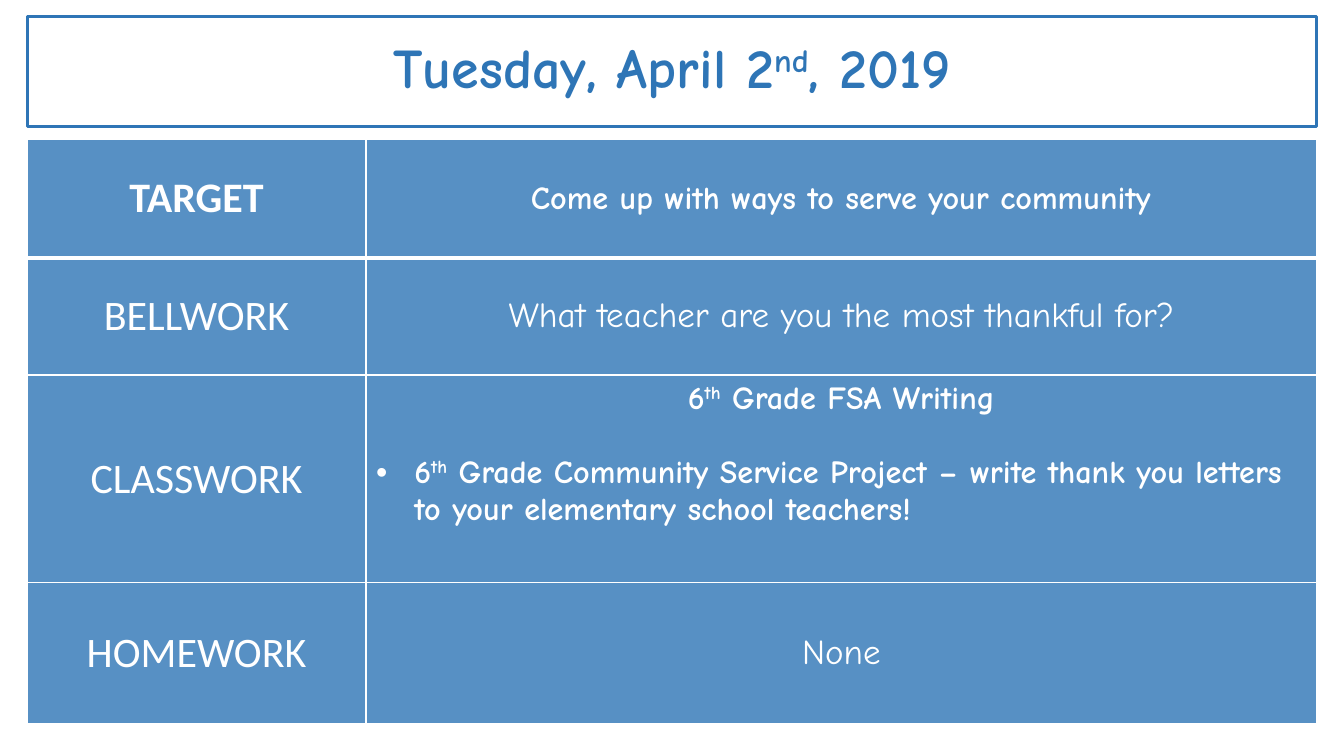
"""Build a daily class agenda slide with a dated banner and a table of tasks."""
import pptx
import pptx.dml.color
import pptx.enum.shapes
import pptx.enum.text
import pptx.oxml
import pptx.oxml.ns
import pptx.util
from pptx.util import Inches

BLUE = pptx.dml.color.RGBColor(0x2E, 0x75, 0xB6)
WHITE = pptx.dml.color.RGBColor(0xFF, 0xFF, 0xFF)
CENTER = pptx.enum.text.PP_ALIGN.CENTER
LEFT = pptx.enum.text.PP_ALIGN.LEFT
MIDDLE = pptx.enum.text.MSO_ANCHOR.MIDDLE
TOP = pptx.enum.text.MSO_ANCHOR.TOP

MARGIN, WIDTH = Inches(0.27), Inches(12.79)
COLUMN_WIDTHS = (3.36, 9.43)
ROW_HEIGHTS = (1.18, 1.16, 2.06, 1.4)
LABEL = {"name": "Calibri", "size": pptx.util.Pt(30), "bold": False}
TASK = {"name": "Comic Neue", "size": pptx.util.Pt(25), "bold": False}
STRONG_TASK = {"name": "Comic Neue", "size": pptx.util.Pt(23), "bold": True}
DATE = {"name": "Comic Neue", "size": pptx.util.Pt(40), "bold": True}

AGENDA = (
    ("TARGET", LABEL | {"bold": True},
     ["Come up with ways to serve your community"], STRONG_TASK),
    ("BELLWORK", LABEL, ["What teacher are you the most thankful for?"], TASK),
    ("CLASSWORK", LABEL,
     ["6^th^ Grade FSA Writing",
      "6^th^ Grade Community Service Project – write thank you letters "
      "to your elementary school teachers!"], STRONG_TASK),
    ("HOMEWORK", LABEL, ["None"], TASK),
)


def set_fill(fill, color, opacity):
    """Apply a solid fill with the given opacity in percent."""
    fill.solid()
    fill.fore_color.rgb = color
    color_node = fill._xPr.find(".//" + pptx.oxml.ns.qn("a:srgbClr"))
    alpha = pptx.oxml.parse_xml(
        f'<a:alpha {pptx.oxml.ns.nsdecls("a")} val="{opacity * 1000}"/>')
    color_node.append(alpha)


def write_line(paragraph, text, font_format, color):
    """Write a centred line whose parts between carets are superscript."""
    paragraph.alignment = CENTER
    for position, part in enumerate(text.split("^")):
        run = paragraph.add_run()
        run.text = part
        for attribute, value in font_format.items():
            setattr(run.font, attribute, value)
        run.font.color.rgb = color
        if position % 2:
            run._r.get_or_add_rPr().set("baseline", "30000")


def make_bullet(paragraph):
    """Turn a paragraph into a left-aligned hanging bullet."""
    paragraph.alignment = LEFT
    properties = paragraph._p.get_or_add_pPr()
    properties.set("marL", str(Inches(0.38)))
    properties.set("indent", str(Inches(-0.38)))
    namespace = pptx.oxml.ns.nsdecls("a")
    properties.append(pptx.oxml.parse_xml(f'<a:buFont {namespace} typeface="Arial"/>'))
    properties.append(pptx.oxml.parse_xml(f'<a:buChar {namespace} char="•"/>'))


def set_borders(cell, side_widths):
    """Draw white cell borders from a dict of side and width in points."""
    properties = cell._tc.get_or_add_tcPr()
    for position, (side, width) in enumerate(side_widths.items()):
        border = pptx.oxml.parse_xml(
            f'<a:ln{side} {pptx.oxml.ns.nsdecls("a")} w="{pptx.util.Pt(width)}">'
            f'<a:solidFill><a:srgbClr val="{WHITE}"/></a:solidFill></a:ln{side}>')
        properties.insert(position, border)


def fill_cell(cell, lines, font_format, side_widths):
    """Write a cell's heading line and any bulleted lines under it."""
    set_fill(cell.fill, BLUE, 80)
    set_borders(cell, side_widths)
    cell.vertical_anchor = TOP if len(lines) > 1 else MIDDLE
    heading = cell.text_frame.paragraphs[0]
    write_line(heading, lines[0], font_format, WHITE)
    for line in lines[1:]:
        heading.space_after = pptx.util.Pt(26.5)
        bullet = cell.text_frame.add_paragraph()
        write_line(bullet, line, font_format, WHITE)
        make_bullet(bullet)


def add_agenda(slide):
    """Add the table of labels and tasks."""
    agenda = slide.shapes.add_table(
        len(AGENDA), len(COLUMN_WIDTHS), MARGIN, Inches(1.38), WIDTH,
        Inches(sum(ROW_HEIGHTS))).table
    for column, width in zip(agenda.columns, COLUMN_WIDTHS):
        column.width = Inches(width)
    for index, (label, label_format, tasks, task_format) in enumerate(AGENDA):
        agenda.rows[index].height = Inches(ROW_HEIGHTS[index])
        side_widths = {"L": 1, "R": 1, "T": 3 if index == 1 else 1,
                       "B": 3 if index == 0 else 1}
        fill_cell(agenda.cell(index, 0), [label], label_format, side_widths)
        fill_cell(agenda.cell(index, 1), tasks, task_format, side_widths)


def add_banner_box(slide, height):
    """Add a plain rectangle at the top of the slide."""
    box = slide.shapes.add_shape(
        pptx.enum.shapes.MSO_SHAPE.RECTANGLE, MARGIN, Inches(0.16), WIDTH, height)
    box.shadow.inherit = False
    return box


def add_banner(slide, date):
    """Add the date and the frame around it."""
    banner = add_banner_box(slide, Inches(1))
    set_fill(banner.fill, WHITE, 65)
    banner.line.fill.background()
    banner.text_frame.word_wrap = True
    banner.text_frame.vertical_anchor = MIDDLE
    write_line(banner.text_frame.paragraphs[0], date, DATE, BLUE)
    frame = add_banner_box(slide, Inches(1.1))
    frame.fill.background()
    frame.line.color.rgb = BLUE
    frame.line.width = pptx.util.Pt(2.25)


def main():
    """Build and save the agenda slide."""
    presentation = pptx.Presentation()
    presentation.slide_width = Inches(13.33)
    presentation.slide_height = Inches(7.5)
    slide = presentation.slides.add_slide(presentation.slide_layouts[6])
    add_agenda(slide)
    add_banner(slide, "Tuesday, April 2^nd^, 2019")
    presentation.save("out.pptx")


if __name__ == "__main__":
    main()
